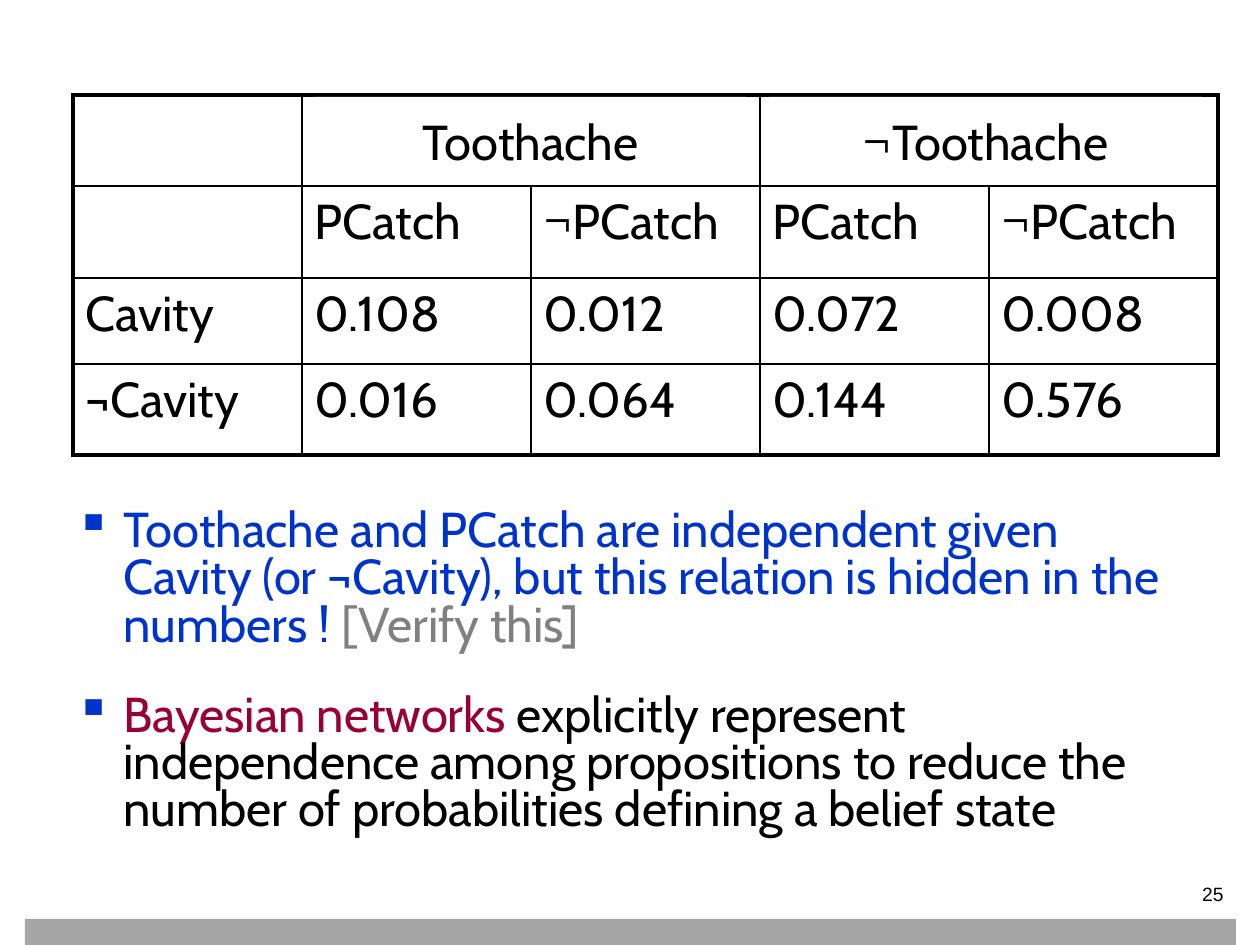
from lxml import etree
from pptx import Presentation
from pptx.dml.color import RGBColor
from pptx.enum.shapes import MSO_SHAPE
from pptx.enum.text import MSO_ANCHOR, PP_ALIGN
from pptx.oxml.ns import qn
from pptx.util import Emu, Pt

PX = 914400 // 126
RECT = MSO_SHAPE.RECTANGLE
MIDDLE = MSO_ANCHOR.MIDDLE
CENTER, RIGHT = PP_ALIGN.CENTER, PP_ALIGN.RIGHT
BLACK = RGBColor(0x00, 0x00, 0x00)
WHITE = RGBColor(0xFF, 0xFF, 0xFF)
BLUE = RGBColor(0x00, 0x33, 0xCC)
RED = RGBColor(0x99, 0x00, 0x33)
GRAY = RGBColor(0x80, 0x80, 0x80)
BAR_GRAY = RGBColor(0xA6, 0xA6, 0xA6)

BODY = dict(name="Cabin", size=Pt(28), bold=False)
NEGATION = dict(size=Pt(24), bold=True)
PAGE_NUMBER = dict(name="Arial", size=Pt(11))

COLUMN_WIDTH = 229
ROW_HEIGHTS = [91, 92, 86, 91]
ROWS = [
    ["", "", "", "", ""],
    ["", "PCatch", "¬PCatch", "PCatch", "¬PCatch"],
    ["Cavity", "0.108", "0.012", "0.072", "0.008"],
    ["¬Cavity", "0.016", "0.064", "0.144", "0.576"],
]
HEADERS = [("Toothache", 242, 431), ("¬Toothache", 696, 433)]
BULLETS = [
    [("Toothache and PCatch are independent given Cavity (or ", BLUE, {}),
     ("¬", BLUE, NEGATION),
     ("Cavity), but this relation is hidden in the numbers ! ", BLUE, {}),
     ("[Verify this]", GRAY, {})],
    [("Bayesian networks", RED, {}),
     (" explicitly represent independence among propositions to reduce "
      "the number of probabilities defining a belief state", BLACK, {})],
]


def box(*lengths):
    """Turn px lengths into EMU."""
    return [Emu(n * PX) for n in lengths]


def assign(target, values):
    """Set each attribute of the target from a dict."""
    for key, value in values.items():
        setattr(target, key, value)


def add_run(p, text, color=BLACK, **values):
    """Add a formatted run to a paragraph."""
    r = p.add_run()
    r.text = text
    assign(r.font, {**BODY, **values})
    r.font.color.rgb = color


def add_rect(s, color, *bounds):
    """Add a plain filled rectangle."""
    sp = s.shapes.add_shape(RECT, *box(*bounds))
    sp.shadow.inherit = False
    sp.fill.solid()
    sp.fill.fore_color.rgb = color
    sp.line.fill.background()
    return sp


def set_borders(cell, widths):
    """Draw black cell borders of the given point widths."""
    tcPr = cell._tc.get_or_add_tcPr()
    for side, width in widths.items():
        ln = etree.SubElement(tcPr, qn(f"a:ln{side}"), w=str(Pt(width)))
        fill = etree.SubElement(ln, qn("a:solidFill"))
        etree.SubElement(fill, qn("a:srgbClr"), val=str(BLACK))


def add_probability_table(s, x, y):
    """Add the joint probability table with its two spanning headers."""
    last_row, last_col = len(ROWS) - 1, len(ROWS[0]) - 1
    size = COLUMN_WIDTH * len(ROWS[0]), sum(ROW_HEIGHTS)
    table = s.shapes.add_table(len(ROWS), len(ROWS[0]), *box(x, y, *size)).table
    assign(table, dict(first_row=False, horz_banding=False))
    for column in table.columns:
        column.width = Emu(COLUMN_WIDTH * PX)
    for i, texts in enumerate(ROWS):
        table.rows[i].height = Emu(ROW_HEIGHTS[i] * PX)
        for j, text in enumerate(texts):
            cell = table.cell(i, j)
            outer = dict(L=j == 0, R=j == last_col, T=i == 0, B=i == last_row)
            set_borders(cell, {k: 2.25 if v else 1 for k, v in outer.items()})
            cell.fill.background()
            p = cell.text_frame.paragraphs[0]
            if text == "¬Cavity":
                add_run(p, "¬", **NEGATION)
                add_run(p, "Cavity")
            elif text:
                add_run(p, text)
    for text, left, width in HEADERS:
        tf = add_rect(s, WHITE, x + left, y + 2, width, 88).text_frame
        assign(tf, dict(word_wrap=False, vertical_anchor=MIDDLE))
        p = tf.paragraphs[0]
        p.alignment = CENTER
        add_run(p, text)


def add_bullets(s, x, y, w, h):
    """Add the two bulleted statements."""
    tf = s.shapes.add_textbox(*box(x, y, w, h)).text_frame
    tf.word_wrap = True
    for i, runs in enumerate(BULLETS):
        p = tf.add_paragraph() if i else tf.paragraphs[0]
        pPr = p._p.get_or_add_pPr()
        indent = 48 * PX
        pPr.set("marL", str(indent))
        pPr.set("indent", str(-indent))
        color = etree.SubElement(pPr, qn("a:buClr"))
        etree.SubElement(color, qn("a:srgbClr"), val=str(BLUE))
        etree.SubElement(pPr, qn("a:buChar"), char="▪")
        p.line_spacing = 0.8
        if i:
            p.space_before = Pt(25)
        for text, rgb, values in runs:
            add_run(p, text, rgb, **values)


def add_footer(s, x, y, w, h):
    """Add the page number above the gray bottom bar."""
    add_rect(s, BAR_GRAY, x, y, w, h)
    tf = s.shapes.add_textbox(*box(x + w - 139, y - 37, 139, 28)).text_frame
    assign(tf, dict(margin_left=0, margin_top=0, margin_bottom=0, word_wrap=True))
    p = tf.paragraphs[0]
    p.alignment = RIGHT
    add_run(p, "25", **PAGE_NUMBER)


def main():
    """Build and save the slide."""
    prs = Presentation()
    prs.slide_width, prs.slide_height = box(1260, 945)
    s = prs.slides.add_slide(prs.slide_layouts[6])
    add_footer(s, 25, 919, 1211, 26)
    add_bullets(s, 63, 504, 1134, 388)
    add_probability_table(s, 73, 95)
    prs.save("out.pptx")


if __name__ == "__main__":
    main()
